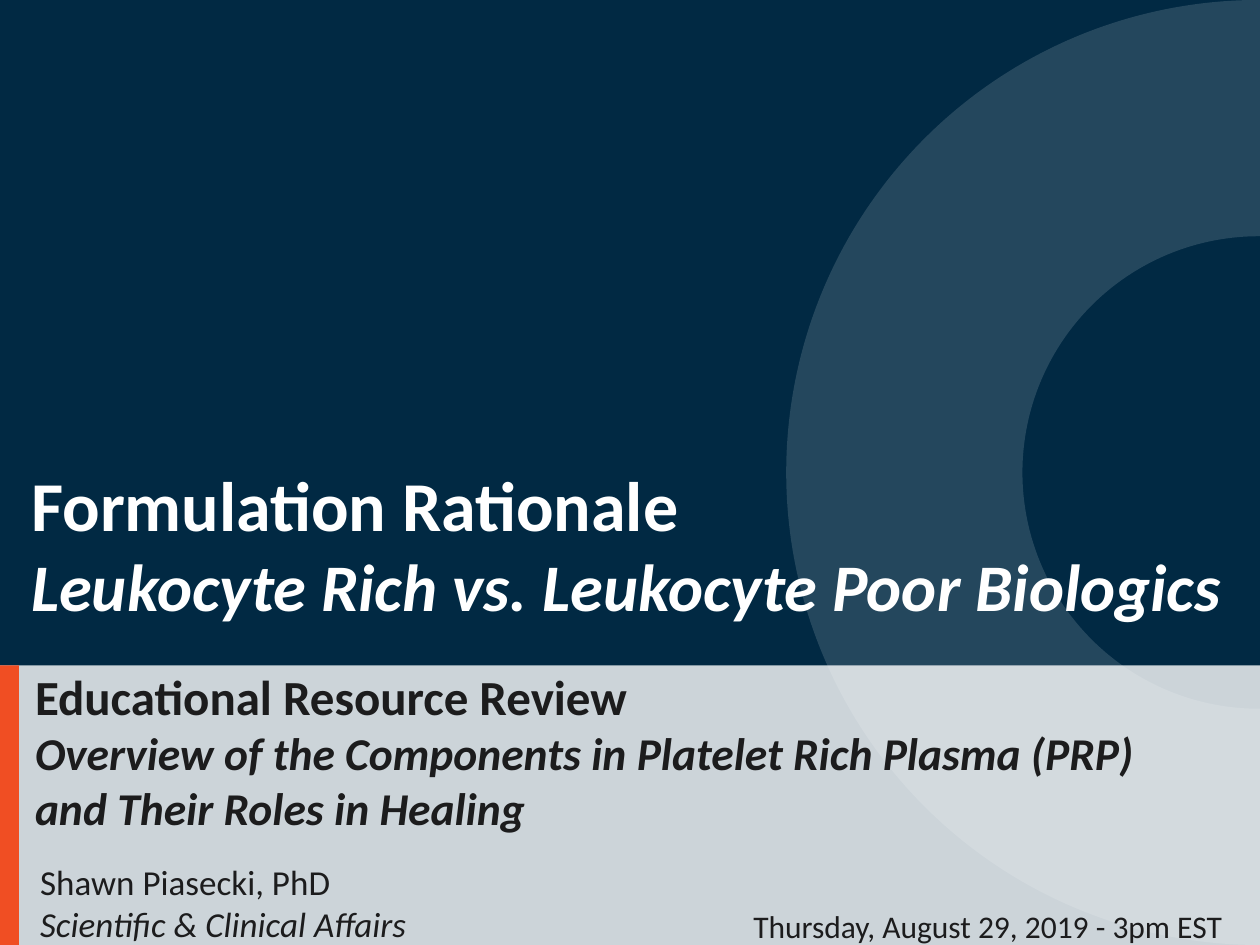
from lxml import etree
from pptx import Presentation
from pptx.dml.color import RGBColor
from pptx.enum.shapes import MSO_SHAPE
from pptx.oxml.ns import qn
from pptx.util import Inches, Pt

DONUT = MSO_SHAPE.DONUT
RECTANGLE = MSO_SHAPE.RECTANGLE

NAVY = RGBColor(0x01, 0x29, 0x43)
WHITE = RGBColor(0xFF, 0xFF, 0xFF)
ORANGE = RGBColor(0xF0, 0x4E, 0x23)
INK = RGBColor(0x1C, 0x1C, 0x1D)

FONT = "Calibri"
SLIDE_WIDTH, SLIDE_HEIGHT = 10, 7.5
BAND_TOP = 5.28
BAND_HEIGHT = SLIDE_HEIGHT - BAND_TOP


def add_panel(slide, kind, box, color, opacity=100):
    panel = slide.shapes.add_shape(kind, *map(Inches, box))
    panel.shadow.inherit = False
    panel.line.fill.background()
    panel.fill.solid()
    panel.fill.fore_color.rgb = color
    if opacity < 100:
        color_element = panel.fill._xPr.find(".//" + qn("a:srgbClr"))
        etree.SubElement(color_element, qn("a:alpha"), val=str(opacity * 1000))


def add_lines(slide, box, color, lines, wrap=True):
    frame = slide.shapes.add_textbox(*map(Inches, box)).text_frame
    frame.word_wrap = wrap
    for index, (text, size, style) in enumerate(lines):
        paragraph = frame.add_paragraph() if index else frame.paragraphs[0]
        run = paragraph.add_run()
        run.text = text
        run.font.color.rgb = color
        for name, value in {"name": FONT, "size": Pt(size), **style}.items():
            setattr(run.font, name, value)


def main():
    deck = Presentation()
    deck.slide_width = Inches(SLIDE_WIDTH)
    deck.slide_height = Inches(SLIDE_HEIGHT)
    slide = deck.slides.add_slide(deck.slide_layouts[6])
    slide.background.fill.solid()
    slide.background.fill.fore_color.rgb = NAVY

    add_panel(slide, DONUT, (6.24, 0, SLIDE_HEIGHT, SLIDE_HEIGHT), WHITE, 14)
    add_panel(slide, RECTANGLE, (0, BAND_TOP, SLIDE_WIDTH, BAND_HEIGHT), WHITE, 80)
    add_panel(slide, RECTANGLE, (0, BAND_TOP, 0.15, BAND_HEIGHT), ORANGE)

    bold = {"bold": True}
    italic = {"italic": True}
    bold_italic = {**bold, **italic}
    add_lines(slide, (0.18, 5.24, 9.34, 1.45), INK, [
        ("Educational Resource Review", 28, bold),
        ("Overview of the Components in Platelet Rich Plasma (PRP) "
         "and Their Roles in Healing", 26, bold_italic),
    ])
    add_lines(slide, (0.22, 6.78, 3.15, 0.77), INK, [
        ("Shawn Piasecki, PhD", 20, {}),
        ("Scientific & Clinical Affairs", 20, italic),
    ], wrap=False)
    add_lines(slide, (5.88, 7.15, 4.12, 0.4), INK, [
        ("Thursday, August 29, 2019 - 3pm EST", 18, {}),
    ])
    add_lines(slide, (0.15, 3.61, 9.87, 1.41), WHITE, [
        ("Formulation Rationale", 40, bold),
        ("Leukocyte Rich vs. Leukocyte Poor Biologics", 38, bold_italic),
    ])
    deck.save("out.pptx")


if __name__ == "__main__":
    main()
